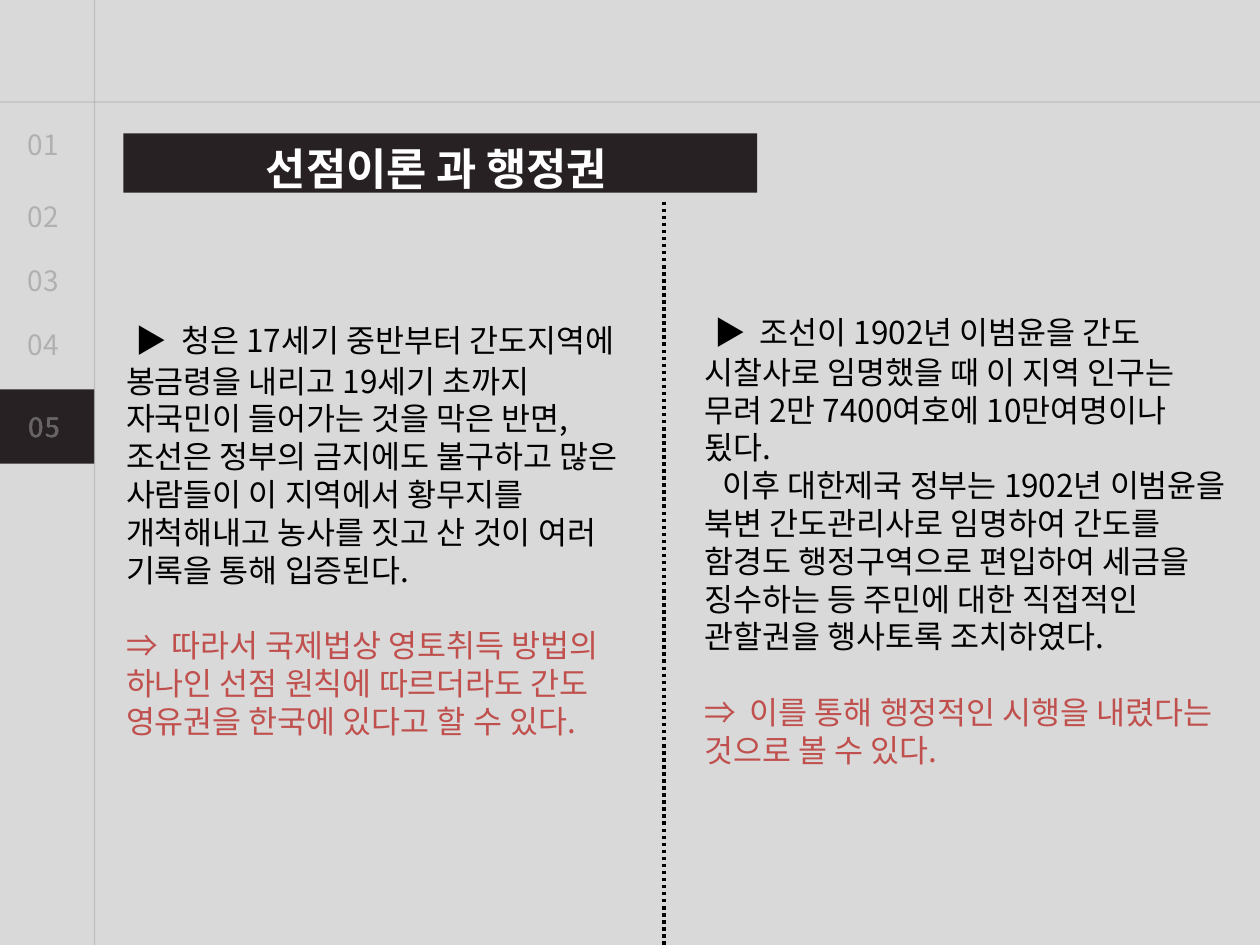
from lxml.etree import SubElement, fromstring
from pptx import Presentation
from pptx.dml.color import RGBColor as RGB
from pptx.enum.dml import MSO_LINE as Dash
from pptx.enum.shapes import MSO_CONNECTOR as Conn, MSO_SHAPE as Shape
from pptx.enum.text import MSO_ANCHOR as Anchor, MSO_AUTO_SIZE as Auto, PP_ALIGN as Align
from pptx.oxml.ns import nsdecls, qn
from pptx.util import Inches, Pt

FONT = "Noto Sans CJK KR"
PAPER = RGB(0xD9, 0xD9, 0xD9)
DARK = RGB(0x27, 0x21, 0x23)
RULE = RGB(0xA6, 0xA6, 0xA6)
FADED = RGB(0xB0, 0xB0, 0xB0)
WHITE = RGB(0xFF, 0xFF, 0xFF)
BLACK = RGB(0, 0, 0)
RED = RGB(0xC0, 0x50, 0x4D)

NAV_TOPS = {"01": 0.96, "02": 1.53, "03": 2.04, "04": 2.55, "05": 3.2}
LEFT_TEXT = [
    ("▶  청은 17세기 중반부터 간도지역에 봉금령을 내리고 19세기 초까지 "
     "자국민이 들어가는 것을 막은 반면,"),
    ("조선은 정부의 금지에도 불구하고 많은 사람들이 이 지역에서 황무지를 "
     "개척해내고 농사를 짓고 산 것이 여러 기록을 통해 입증된다."),
    ("⇒  따라서 국제법상 영토취득 방법의 하나인 선점 원칙에 따르더라도 "
     "간도 영유권을 한국에 있다고 할 수 있다."),
]
RIGHT_TEXT = [
    ("▶  조선이 1902년 이범윤을 간도 시찰사로 임명했을 때 이 지역 인구는 "
     "무려 2만 7400여호에 10만여명이나 됬다."),
    ("이후 대한제국 정부는 1902년 이범윤을 북변 간도관리사로 임명하여 간도를 "
     "함경도 행정구역으로 편입하여 세금을 징수하는 등 주민에 대한 직접적인 "
     "관할권을 행사토록 조치하였다."),
    "⇒  이를 통해 행정적인 시행을 내렸다는 것으로 볼 수 있다.",
]


def place(sp, box):
    """Move a shape to a left, top, width, height box in inches."""
    sp.left, sp.top, sp.width, sp.height = map(Inches, box)


def add_run(p, text, size, color, bold=False):
    """Append a formatted run, without pair kerning, to a paragraph."""
    r = p.add_run()
    r.text = text
    r.font.name, r.font.size, r.font.bold = FONT, Pt(size), bold
    r.font.color.rgb = color
    r.font._element.set("kern", "0")
    SubElement(r.font._element, qn("a:ea")).set("typeface", FONT)
    return r


def add_bar(slide, box):
    """Add a dark bar behind everything else."""
    sp = slide.shapes.add_shape(Shape.RECTANGLE, *map(Inches, box))
    sp.shadow.inherit = False
    sp.fill.solid()
    sp.fill.fore_color.rgb = DARK
    sp.line.fill.background()
    sp.element.getparent().insert(2, sp.element)


def add_rule(slide, ends, color, width, dash=Dash.SOLID, alpha=None):
    """Add a straight line between two points."""
    line = slide.shapes.add_connector(Conn.STRAIGHT, *map(Inches, ends))
    line.line.color.rgb = color
    line.line.width = Pt(width)
    line.line.dash_style = dash
    props = line.element.find(qn("p:spPr"))
    SubElement(props, qn("a:effectLst"))
    if alpha:
        clr = next(props.iter(qn("a:srgbClr")))
        SubElement(clr, qn("a:alpha")).set("val", str(alpha * 1000))


def add_nav(slide, left, width, current):
    """Add the column of section numbers with the current one marked."""
    add_bar(slide, (0, 3.09, 0.75, 0.59))
    for label, top in NAV_TOPS.items():
        tb = slide.shapes.add_textbox(*map(Inches, (left, top, width, 0.37)))
        tf = tb.text_frame
        tf.word_wrap = True
        tf.vertical_anchor = Anchor.MIDDLE
        active = label == current
        r = add_run(tf.paragraphs[0], label, 16, WHITE if active else FADED, active)
        if active:
            r.font._element.insert(0, fromstring(
                f'<a:ln {nsdecls("a")} w="9525"><a:solidFill><a:srgbClr val="000000">'
                '<a:alpha val="30000"/></a:srgbClr></a:solidFill></a:ln>'))


def add_title(slide, box, text):
    """Fill the title placeholder over its dark bar."""
    add_bar(slide, (0.98, 1.06, 5.03, 0.47))
    title = slide.shapes.title
    place(title, box)
    tf = title.text_frame
    tf.auto_size = Auto.NONE
    tf.vertical_anchor = Anchor.MIDDLE
    p = tf.paragraphs[0]
    p.alignment = Align.CENTER
    add_run(p, text, 25, WHITE, True)


def add_column(body, box, texts, second_indent=0):
    """Fill a body placeholder with two statements and a red conclusion."""
    place(body, box)
    tf = body.text_frame
    tf.word_wrap = True
    tf.auto_size = Auto.NONE
    tf.vertical_anchor = Anchor.TOP
    tf.margin_top, tf.margin_right = Inches(0.17), Inches(0.12)
    for i, text in enumerate(texts):
        p = tf.add_paragraph() if i else tf.paragraphs[0]
        last = i == len(texts) - 1
        p.line_spacing = Pt(21.6)
        p.space_before = Pt(21.6 if last else 0)
        props = p._p.get_or_add_pPr()
        props.set("marL", "0")
        props.set("indent", str(Inches(second_indent if i == 1 else 0)))
        SubElement(props, qn("a:buNone"))
        if i == 0:
            add_run(p, " ", 25, BLACK)
        add_run(p, text, 18, RED if last else BLACK)


def main():
    """Build and save the slide."""
    prs = Presentation()
    prs.slide_width, prs.slide_height = Inches(10), Inches(7.5)
    slide = prs.slides.add_slide(prs.slide_layouts[3])
    slide.background.fill.solid()
    slide.background.fill.fore_color.rgb = PAPER
    add_rule(slide, (0.75, 0, 0.75, 7.5), RULE, 0.75, alpha=50)
    add_rule(slide, (0, 0.81, 10, 0.81), RULE, 0.75, alpha=50)
    add_nav(slide, 0.12, 0.49, "05")
    add_title(slide, (0.1, 1.07, 6.73, 0.52), "선점이론 과 행정권")
    add_column(slide.placeholders[1], (0.9, 2.4, 4.39, 4.58), LEFT_TEXT)
    add_column(slide.placeholders[2], (5.49, 2.33, 4.39, 4.58), RIGHT_TEXT, 0.14)
    add_rule(slide, (5.27, 1.6, 5.27, 7.5), BLACK, 2, Dash.ROUND_DOT)
    prs.save("out.pptx")


if __name__ == "__main__":
    main()
